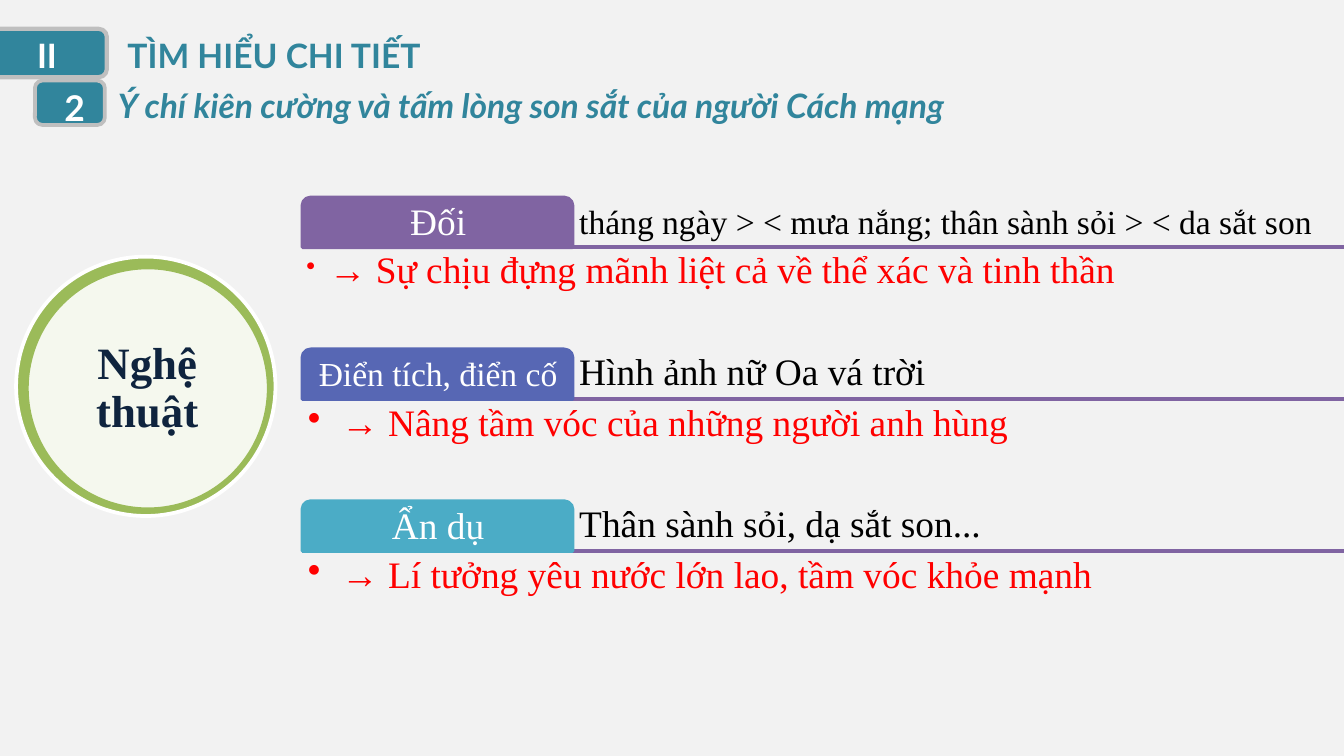
from dataclasses import dataclass

from lxml import etree
from pptx import Presentation
from pptx.dml.color import RGBColor
from pptx.enum.shapes import MSO_CONNECTOR, MSO_SHAPE
from pptx.enum.text import MSO_ANCHOR, PP_ALIGN
from pptx.oxml.ns import qn
from pptx.util import Inches, Pt

ELLIPSE, ROUNDED = MSO_SHAPE.OVAL, MSO_SHAPE.ROUNDED_RECTANGLE
TAB = MSO_SHAPE.ROUND_2_SAME_RECTANGLE
STRAIGHT = MSO_CONNECTOR.STRAIGHT
TOP, MIDDLE, BOTTOM = MSO_ANCHOR.TOP, MSO_ANCHOR.MIDDLE, MSO_ANCHOR.BOTTOM
LEFT, CENTER = PP_ALIGN.LEFT, PP_ALIGN.CENTER

CELL = 0.1  # inches per grid column and row
COLUMNS, ROWS = 100, 56.25
SERIF, SANS = "Times New Roman", "Lato"
COLORS = {
    "background": "F2F2F2", "white": "FFFFFF", "black": "000000",
    "teal": "31859C", "gray": "BFBFBF", "green": "9BBB59", "navy": "0F243E",
    "purple": "8064A2", "indigo": "5767B4", "cyan": "4BACC6", "red": "FF0000",
}

TAB_LEFT, TAB_WIDTH, TAB_HEIGHT = 22.5, 20.1, 3.7
FIRST_TOP, DEVICE_PITCH = 14.7, 11.3
EXAMPLE_LEFT = 42.7
CONCLUSION_HEIGHT = 7.4


@dataclass(frozen=True)
class Box:
    """A frame in grid columns and rows."""
    column: float
    row: float
    width: float
    height: float


@dataclass(frozen=True)
class Run:
    text: str
    size: float
    color: str
    font: str = SERIF
    bold: bool = False
    italic: bool = False


@dataclass(frozen=True)
class Layout:
    align: int = LEFT
    anchor: int = TOP
    margins: tuple[float, float] = (1, 0.5)
    line_spacing: float = 1
    wrap: bool = True
    bullet_indent: float = 0


@dataclass(frozen=True)
class Device:
    """A literary device: name, example and conclusion."""
    name: Run
    color: str
    example: Run
    conclusion: tuple[Run, ...]
    indent: float = 2.5
    margin: float = 0.4


SNUG = (0.4, 0.4)
CENTERED = Layout(CENTER, MIDDLE, SNUG, 0.9)
EXAMPLE = Layout(LEFT, BOTTOM, SNUG, 0.9)
HEADING = Layout()
NUMBER = Layout(CENTER)

DEVICES = [
    Device(Run("Đối", 20, "white"), "purple",
           Run("tháng ngày > < mưa nắng; thân sành sỏi > < da sắt son", 18, "black"),
           (Run(" ", 14, "red"),
            Run("→ Sự chịu đựng mãnh liệt cả về thể xác và tinh thần", 20, "red")),
           indent=1.2, margin=0.3),
    Device(Run("Điển tích, điển cố", 18, "white"), "indigo",
           Run("Hình ảnh nữ Oa vá trời", 20, "black"),
           (Run("→ Nâng tầm vóc của những người anh hùng", 20, "red"),)),
    Device(Run("Ẩn dụ", 20, "white"), "cyan",
           Run("Thân sành sỏi, dạ sắt son...", 20, "black"),
           (Run("→ Lí tưởng yêu nước lớn lao, tầm vóc khỏe mạnh", 20, "red"),)),
]


def grid(cells: float) -> int:
    return Inches(cells * CELL)


def frame(box: Box) -> tuple[int, ...]:
    return tuple(grid(value) for value in (box.column, box.row, box.width, box.height))


def rgb(name: str) -> RGBColor:
    return RGBColor.from_string(COLORS[name])


def add_bullet(paragraph, indent: float) -> None:
    paragraph.level = 1
    properties = paragraph._p.get_or_add_pPr()
    properties.set("marL", str(grid(indent)))
    properties.set("indent", str(-grid(indent)))
    etree.SubElement(properties, qn("a:buChar"), char="•")


def add_text(slide, box: Box, runs: tuple[Run, ...], layout: Layout) -> None:
    text_frame = slide.shapes.add_textbox(*frame(box)).text_frame
    text_frame.word_wrap = layout.wrap
    text_frame.vertical_anchor = layout.anchor
    side, end = (grid(margin) for margin in layout.margins)
    text_frame.margin_left = text_frame.margin_right = side
    text_frame.margin_top = text_frame.margin_bottom = end
    paragraph = text_frame.paragraphs[0]
    if layout.bullet_indent:
        add_bullet(paragraph, layout.bullet_indent)
    paragraph.alignment = layout.align
    paragraph.line_spacing = layout.line_spacing
    for item in runs:
        run = paragraph.add_run()
        run.text = item.text
        run.font.name = item.font
        run.font.size = Pt(item.size)
        run.font.bold = item.bold
        run.font.italic = item.italic
        run.font.color.rgb = rgb(item.color)


def add_figure(slide, kind: int, box: Box, fill: str, line: str, width: float = 2):
    shape = slide.shapes.add_shape(kind, *frame(box))
    shape.shadow.inherit = False
    shape.fill.solid()
    shape.fill.fore_color.rgb = rgb(fill)
    shape.line.color.rgb = rgb(line)
    shape.line.width = Pt(width)
    return shape


def add_rule(slide, row: float) -> None:
    """Draw a device's underline to the slide's right edge."""
    connector = slide.shapes.add_connector(
        STRAIGHT, grid(TAB_LEFT), grid(row), grid(COLUMNS), grid(row))
    connector.line.color.rgb = rgb("purple")
    connector.line.width = Pt(2)
    etree.SubElement(connector._element.spPr, qn("a:effectLst"))


def add_topic(slide) -> None:
    add_figure(slide, ELLIPSE, Box(1.2, 19.1, 19.3, 19.3), "green", "white")
    disc = add_figure(slide, ELLIPSE, Box(2, 19.9, 18, 18), "white", "green")
    color = disc.fill._xPr.find(qn("a:solidFill"))[0]
    etree.SubElement(color, qn("a:alpha"), val="90000")
    add_text(slide, Box(4.5, 22.5, 12.9, 12.9),
             (Run("Nghệ thuật", 24, "navy", bold=True),), CENTERED)


def add_headings(slide) -> None:
    section = add_figure(slide, TAB, Box(1.8, -0.4, 3.6, 8.7), "teal", "gray", 2.25)
    section.rotation = 90
    add_text(slide, Box(0, 2.1, 7, 4), (Run("II", 18, "white", SANS, True),), NUMBER)
    add_text(slide, Box(8.5, 2.1, 28.1, 4),
             (Run("TÌM HIỂU CHI TIẾT", 18, "teal", SANS, True),), HEADING)
    add_text(slide, Box(7.8, 5.8, 88.7, 4),
             (Run("Ý chí kiên cường và tấm lòng son sắt của người Cách mạng",
                  18, "teal", SANS, True, True),), HEADING)
    add_figure(slide, ROUNDED, Box(2.6, 6, 5.2, 3.3), "teal", "gray")
    add_text(slide, Box(3.7, 5.9, 3.7, 4.2),
             (Run("2", 19, "white", SANS, True),), Layout(CENTER, wrap=False))


def add_device(slide, device: Device, top: float) -> None:
    bottom = top + TAB_HEIGHT
    add_rule(slide, bottom)
    add_text(slide, Box(EXAMPLE_LEFT, top, COLUMNS - EXAMPLE_LEFT, TAB_HEIGHT),
             (device.example,), EXAMPLE)
    add_figure(slide, TAB, Box(TAB_LEFT, top, TAB_WIDTH, TAB_HEIGHT),
               device.color, device.color)
    add_text(slide, Box(TAB_LEFT + 0.2, top + 0.2, TAB_WIDTH - 0.3, TAB_HEIGHT - 0.2),
             (device.name,), CENTERED)
    add_text(slide, Box(TAB_LEFT, bottom, COLUMNS - TAB_LEFT, CONCLUSION_HEIGHT),
             device.conclusion,
             Layout(margins=(device.margin, device.margin), line_spacing=0.9,
                    bullet_indent=device.indent))


def main() -> None:
    presentation = Presentation()
    presentation.slide_width, presentation.slide_height = grid(COLUMNS), grid(ROWS)
    slide = presentation.slides.add_slide(presentation.slide_layouts[6])
    slide.background.fill.solid()
    slide.background.fill.fore_color.rgb = rgb("background")
    add_topic(slide)
    add_headings(slide)
    for index, device in enumerate(DEVICES):
        add_device(slide, device, FIRST_TOP + index * DEVICE_PITCH)
    presentation.save("out.pptx")


if __name__ == "__main__":
    main()
